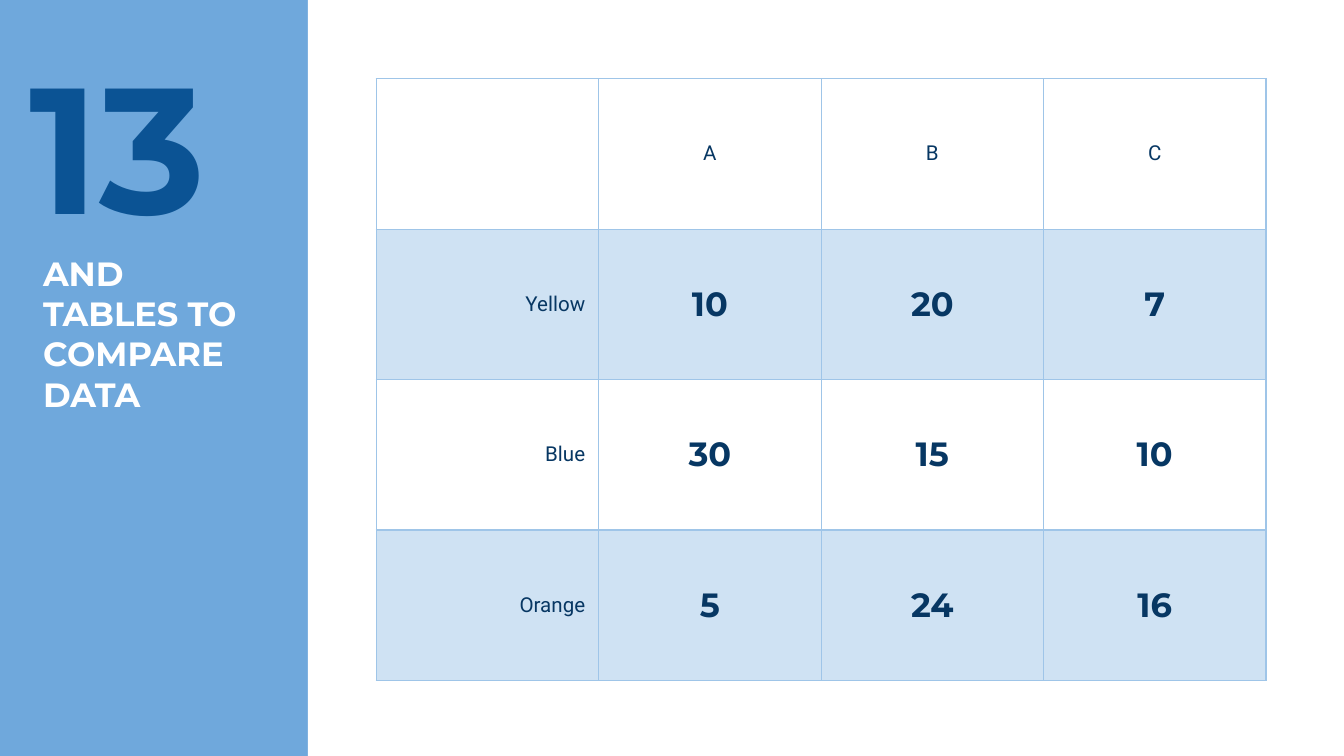
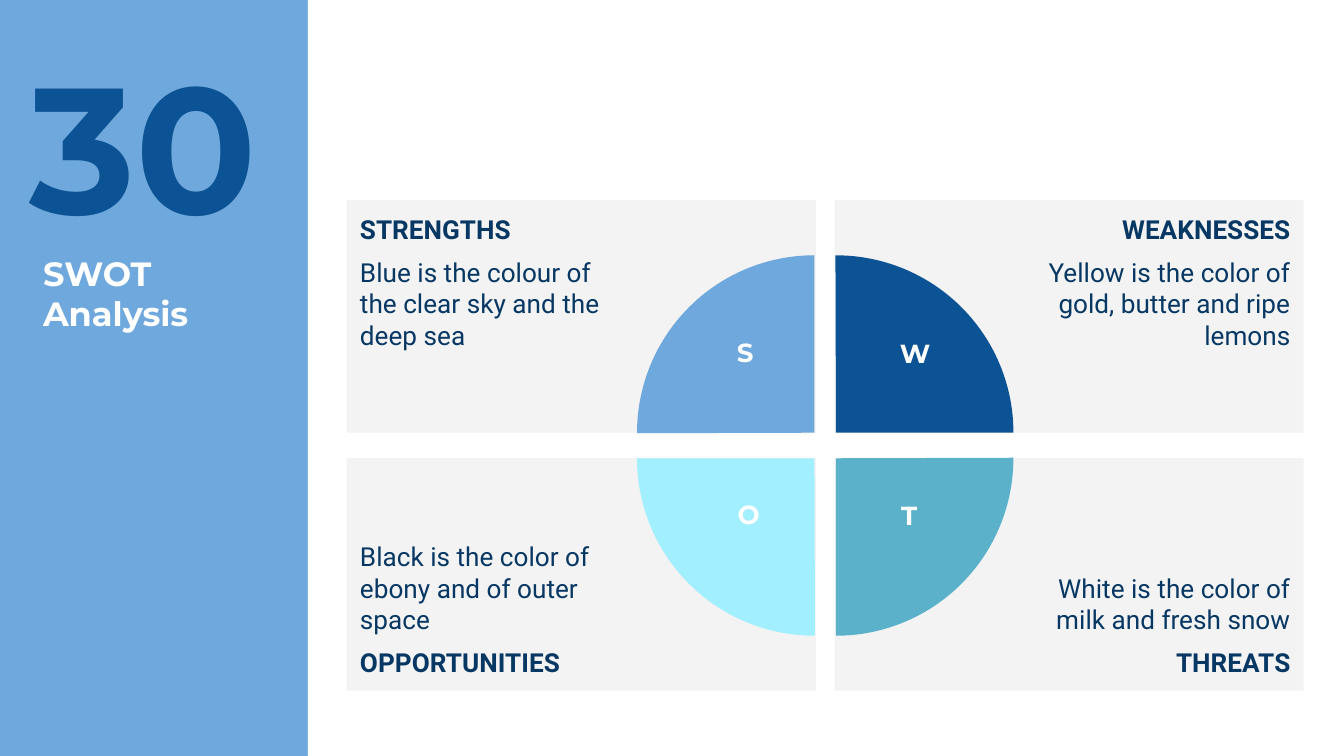
"""Build two infographic slides: a comparison table and a SWOT analysis."""
from dataclasses import dataclass

from lxml import etree
from pptx import Presentation
from pptx.dml.color import RGBColor
from pptx.enum.shapes import MSO_SHAPE
from pptx.enum.text import MSO_ANCHOR, MSO_AUTO_SIZE, PP_ALIGN
from pptx.oxml.ns import qn
from pptx.util import Inches, Pt

RECT, PIE = MSO_SHAPE.RECTANGLE, MSO_SHAPE.PIE
TOP, MIDDLE, BOTTOM = MSO_ANCHOR.TOP, MSO_ANCHOR.MIDDLE, MSO_ANCHOR.BOTTOM
LEFT, CENTER, RIGHT = PP_ALIGN.LEFT, PP_ALIGN.CENTER, PP_ALIGN.RIGHT
NO_AUTOFIT = MSO_AUTO_SIZE.NONE

SLIDE_WIDTH = 10
SLIDE_HEIGHT = SLIDE_WIDTH * 9 / 16
COLORS = {
    "sky": "6FA8DC", "royal": "0B5394", "navy": "073763", "white": "FFFFFF",
    "band": "CFE2F3", "border": "9FC5E8", "grey": "F3F3F3",
    "teal": "5AB1C9", "aqua": "A1EFFF",
}
HEADING_FONT, BODY_FONT = "Montserrat", "Roboto"


@dataclass(frozen=True)
class Style:
    size: int
    font: str
    color: str
    bold: bool = False


@dataclass(frozen=True)
class Quadrant:
    letter: str
    heading: str
    text: str
    color: str
    col: int
    row: int
    rotation: int
    letter_box: tuple[float, float, float, float]


NUMBER = Style(96, HEADING_FONT, "royal", True)
TITLE = Style(18, HEADING_FONT, "white", True)
LABEL = Style(11, BODY_FONT, "navy")
VALUE = Style(18, HEADING_FONT, "navy", True)
LETTER = Style(14, HEADING_FONT, "white", True)
BODY = Style(14, BODY_FONT, "navy")
BODY_HEADING = Style(14, BODY_FONT, "navy", True)

TABLE_ROWS = [
    ["", "A", "B", "C"],
    ["Yellow", "10", "20", "7"],
    ["Blue", "30", "15", "10"],
    ["Orange", "5", "24", "16"],
]
QUADRANTS = [
    Quadrant("S", "STRENGTHS", "Blue is the colour of the clear sky and the deep sea",
             "sky", 0, 0, 0, (5.35, 2.45, 0.39, 0.49)),
    Quadrant("W", "WEAKNESSES", "Yellow is the color of gold, butter and ripe lemons",
             "royal", 1, 0, 90, (6.43, 2.46, 0.76, 0.47)),
    Quadrant("O", "OPPORTUNITIES", "Black is the color of ebony and of outer space",
             "aqua", 0, 1, 270, (5.31, 3.66, 0.52, 0.49)),
    Quadrant("T", "THREATS", "White is the color of milk and fresh snow",
             "teal", 1, 1, 180, (6.56, 3.67, 0.41, 0.47)),
]


def rgb(name: str) -> RGBColor:
    """Return a named colour."""
    return RGBColor.from_string(COLORS[name])


def format_paragraph(p, style: Style, align=LEFT) -> None:
    """Apply a text style and alignment to a paragraph."""
    p.alignment = align
    for r in p.runs:
        r.font.size = Pt(style.size)
        r.font.name = style.font
        r.font.bold = style.bold
        r.font.color.rgb = rgb(style.color)


def set_frame(tf, left=0.1, top=0.1, right=0.1, bottom=0.1, anchor=TOP) -> None:
    """Set wrapping, insets and anchor of a text frame."""
    tf.word_wrap = True
    tf.auto_size = NO_AUTOFIT
    tf.margin_left, tf.margin_right = Inches(left), Inches(right)
    tf.margin_top, tf.margin_bottom = Inches(top), Inches(bottom)
    tf.vertical_anchor = anchor


def add_shape(s, kind, left: float, top: float, width: float, height: float, color: str):
    """Add a flat filled shape without outline."""
    sp = s.shapes.add_shape(kind, Inches(left), Inches(top), Inches(width), Inches(height))
    sp.shadow.inherit = False
    sp.fill.solid()
    sp.fill.fore_color.rgb = rgb(color)
    sp.line.fill.background()
    return sp


def add_text(s, text: str, box: tuple[float, float, float, float], style: Style,
             align=LEFT, inset: float = 0.1) -> None:
    """Add a one-paragraph text box."""
    tf = s.shapes.add_textbox(*map(Inches, box)).text_frame
    set_frame(tf, top=inset, bottom=inset)
    tf.text = text
    format_paragraph(tf.paragraphs[0], style, align)


def add_slide(prs, number: str, title: str):
    """Add a slide with the white panel, title and large number."""
    s = prs.slides.add_slide(prs.slide_layouts[5])
    add_shape(s, RECT, 2.29, 0, 7.71, SLIDE_HEIGHT, "white")
    sp = s.shapes.title
    sp.left, sp.top, sp.width, sp.height = map(Inches, (0.22, 1.78, 1.87, 0.94))
    tf = sp.text_frame
    set_frame(tf)
    tf.text = title
    format_paragraph(tf.paragraphs[0], TITLE)
    add_text(s, number, (0.12, 0.16, 1.98, 1.37), NUMBER)
    return s


def set_borders(cell, color: str, width: float) -> None:
    """Draw all four borders of a table cell."""
    tc_pr = cell._tc.get_or_add_tcPr()
    for i, side in enumerate(("a:lnL", "a:lnR", "a:lnT", "a:lnB")):
        ln = etree.Element(qn(side), w=str(Pt(width)))
        fill = etree.SubElement(ln, qn("a:solidFill"))
        etree.SubElement(fill, qn("a:srgbClr"), val=COLORS[color])
        tc_pr.insert(i, ln)


def add_table(s) -> None:
    """Add the comparison table with alternating row fills."""
    table = s.shapes.add_table(len(TABLE_ROWS), len(TABLE_ROWS[0]), Inches(2.8),
                               Inches(0.585), Inches(6.62), Inches(4.48)).table
    table.first_row = table.horz_banding = False
    for i, values in enumerate(TABLE_ROWS):
        for j, value in enumerate(values):
            cell = table.cell(i, j)
            cell.text = value
            cell.vertical_anchor = MIDDLE
            cell.margin_left = cell.margin_right = Inches(0.1)
            cell.margin_top = cell.margin_bottom = Inches(0.07)
            if i % 2:
                cell.fill.solid()
                cell.fill.fore_color.rgb = rgb("band")
            else:
                cell.fill.background()
            set_borders(cell, "border", 0.75)
            format_paragraph(cell.text_frame.paragraphs[0], VALUE if i and j else LABEL,
                             CENTER if j else RIGHT)


def add_card(s, q: Quadrant) -> None:
    """Add the grey card of a quadrant, its heading on the outer edge."""
    sp = add_shape(s, RECT, 2.58 + 3.63 * q.col, 1.49 + 1.92 * q.row, 3.49, 1.73, "grey")
    tf = sp.text_frame
    set_frame(tf, left=1.5 if q.col else 0.1, right=0.1 if q.col else 1.5,
              anchor=BOTTOM if q.row else TOP)
    lines = [(q.heading, BODY_HEADING), (q.text, BODY)]
    if q.row:
        lines.reverse()
    tf.text = "\n".join(text for text, _ in lines)
    for p, (_, style) in zip(tf.paragraphs, lines):
        format_paragraph(p, style, RIGHT if q.col else LEFT)
    p = tf.paragraphs[-1]
    p.space_before = p.space_after = Pt(6)


def add_quarter(s, q: Quadrant) -> None:
    """Add the quarter circle of a quadrant."""
    sp = add_shape(s, PIE, 4.74 + 0.16 * q.col, 1.9 + 0.19 * q.row, 2.64, 2.64, q.color)
    sp.adjustments[0], sp.adjustments[1] = 107.89, 162
    sp.rotation = q.rotation


def main() -> None:
    """Build and save the presentation."""
    prs = Presentation()
    prs.slide_width, prs.slide_height = Inches(SLIDE_WIDTH), Inches(SLIDE_HEIGHT)
    fill = prs.slide_master.background.fill
    fill.solid()
    fill.fore_color.rgb = rgb("sky")

    add_table(add_slide(prs, "13", "AND TABLES TO COMPARE DATA"))

    s = add_slide(prs, "30", "SWOT Analysis")
    for q in QUADRANTS:
        add_card(s, q)
    for q in QUADRANTS:
        add_quarter(s, q)
    for q in QUADRANTS:
        add_text(s, q.letter, q.letter_box, LETTER, CENTER, inset=0.05)
    prs.save("out.pptx")


if __name__ == "__main__":
    main()
